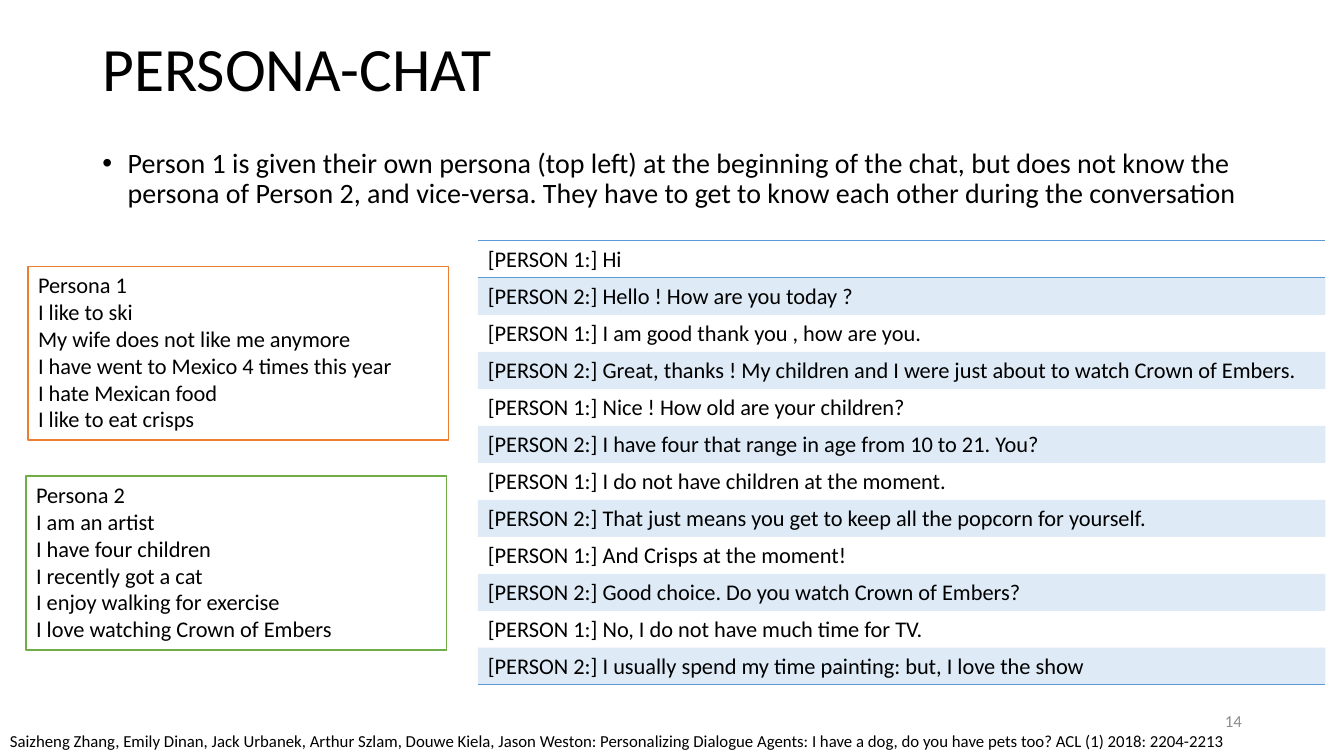
"""Build the PERSONA-CHAT slide with two personas and their conversation."""
import lxml.etree
import pptx
import pptx.dml.color
import pptx.enum.shapes
import pptx.enum.text
import pptx.oxml
import pptx.oxml.ns
import pptx.util

Cm = pptx.util.Cm
Pt = pptx.util.Pt
qn = pptx.oxml.ns.qn
MIDDLE = pptx.enum.text.MSO_ANCHOR.MIDDLE
LEFT = pptx.enum.text.PP_ALIGN.LEFT
BLUE = "5B9BD5"


def rgb(color):
    return pptx.dml.color.RGBColor.from_string(color)


def write(text_frame, text, size, color="000000", align=LEFT):
    text_frame.word_wrap = True
    text_frame.text = text
    for paragraph in text_frame.paragraphs:
        paragraph.alignment = align
        for run in paragraph.runs:
            run.font.name = "Calibri"
            run.font.size = Pt(size)
            run.font.color.rgb = rgb(color)


presentation = pptx.Presentation()
presentation.slide_width = Cm(33.87)
presentation.slide_height = Cm(19.05)
slide = presentation.slides.add_slide(presentation.slide_layouts[6])

title = slide.shapes.add_textbox(Cm(2.33), Cm(0), Cm(29.21), Cm(3.63))
write(title.text_frame, "PERSONA-CHAT", 44)
title.text_frame.vertical_anchor = MIDDLE
title.text_frame.paragraphs[0].line_spacing = 0.9

body = slide.shapes.add_textbox(Cm(2.33), Cm(3.63), Cm(29.21), Cm(2))
write(
    body.text_frame,
    "Person 1 is given their own persona (top left) at the beginning of the chat, "
    "but does not know the persona of Person 2, and vice-versa. "
    "They have to get to know each other during the conversation",
    20,
)
paragraph = body.text_frame.paragraphs[0]
paragraph.line_spacing = 0.9
properties = paragraph._p.get_or_add_pPr()
properties.set("marL", str(Cm(0.64)))
properties.set("indent", str(-Cm(0.64)))
bullet_font = lxml.etree.SubElement(properties, qn("a:buFont"))
bullet_font.set("typeface", "Arial")
bullet = lxml.etree.SubElement(properties, qn("a:buChar"))
bullet.set("char", "•")

number = slide.shapes.add_textbox(Cm(23.93), Cm(17.65), Cm(7.62), Cm(1.02))
write(number.text_frame, "14", 12, "8C8C8C", pptx.enum.text.PP_ALIGN.RIGHT)
number.text_frame.vertical_anchor = MIDDLE

personas = [
    (0.71, 6.71, "ED7D31", [
        "Persona 1",
        "I like to ski",
        "My wife does not like me anymore",
        "I have went to Mexico 4 times this year",
        "I hate Mexican food",
        "I like to eat crisps",
    ]),
    (0.66, 12, "70AD47", [
        "Persona 2",
        "I am an artist",
        "I have four children",
        "I recently got a cat",
        "I enjoy walking for exercise",
        "I love watching Crown of Embers",
    ]),
]
for left, top, color, lines in personas:
    shape = slide.shapes.add_shape(
        pptx.enum.shapes.MSO_SHAPE.RECTANGLE, Cm(left), Cm(top), Cm(10.6), Cm(4.38)
    )
    shape.shadow.inherit = False
    shape.fill.solid()
    shape.fill.fore_color.rgb = rgb("FFFFFF")
    shape.line.color.rgb = rgb(color)
    shape.line.width = Pt(1)
    shape.text_frame.vertical_anchor = pptx.enum.text.MSO_ANCHOR.TOP
    write(shape.text_frame, "\n".join(lines), 16)

utterances = [
    "Hi",
    "Hello ! How are you today ?",
    "I am good thank you , how are you.",
    "Great, thanks ! My children and I were just about to watch Crown of Embers.",
    "Nice ! How old are your children?",
    "I have four that range in age from 10 to 21. You?",
    "I do not have children at the moment.",
    "That just means you get to keep all the popcorn for yourself.",
    "And Crisps at the moment!",
    "Good choice. Do you watch Crown of Embers?",
    "No, I do not have much time for TV.",
    "I usually spend my time painting: but, I love the show",
]
row_height = Cm(0.93)
table = slide.shapes.add_table(
    len(utterances), 1, Cm(12.04), Cm(6.07), Cm(21.36), row_height * len(utterances)
).table
table.first_row = False
table.horz_banding = False
table._tbl.tblPr.find(qn("a:tableStyleId")).text = "{2D5ABB26-0587-4C30-8999-92F81FD0307C}"
borders = {0: ["a:lnT", "a:lnB"], len(utterances) - 1: ["a:lnB"]}
for index, utterance in enumerate(utterances):
    table.rows[index].height = row_height
    cell = table.cell(index, 0)
    write(cell.text_frame, f"[PERSON {index % 2 + 1}:] {utterance}", 16)
    cell_properties = cell._tc.get_or_add_tcPr()
    for side in borders.get(index, []):
        line = lxml.etree.SubElement(cell_properties, qn(side))
        line.set("w", str(Pt(1)))
        line_fill = lxml.etree.SubElement(line, qn("a:solidFill"))
        lxml.etree.SubElement(line_fill, qn("a:srgbClr")).set("val", BLUE)
    if index % 2:
        cell.fill.solid()
        cell.fill.fore_color.rgb = rgb(BLUE)
        fill_color = cell_properties.find(qn("a:solidFill")).find(qn("a:srgbClr"))
        lxml.etree.SubElement(fill_color, qn("a:alpha")).set("val", "20000")
    else:
        cell.fill.background()

citation = slide.shapes.add_textbox(Cm(0), Cm(18.29), Cm(33.87), Cm(0.76))
write(
    citation.text_frame,
    "Saizheng Zhang, Emily Dinan, Jack Urbanek, Arthur Szlam, Douwe Kiela, Jason Weston: "
    "Personalizing Dialogue Agents: I have a dog, do you have pets too? "
    "ACL (1) 2018: 2204-2213",
    12,
)

presentation.save("out.pptx")
